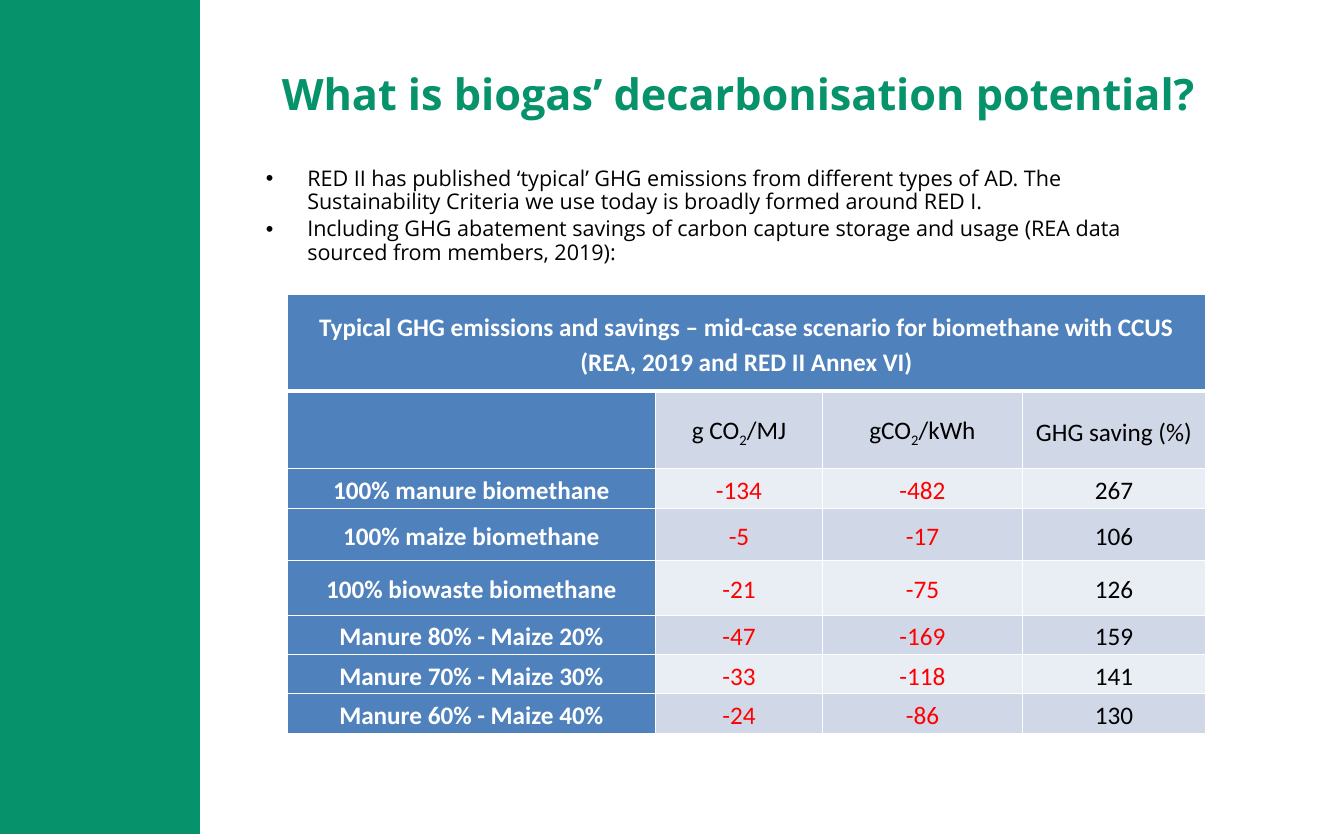
from lxml import etree
from pptx import Presentation
from pptx.dml.color import RGBColor
from pptx.enum.shapes import MSO_SHAPE
from pptx.enum.text import MSO_ANCHOR, MSO_AUTO_SIZE, PP_ALIGN
from pptx.oxml.ns import qn
from pptx.util import Inches, Pt

RECT = MSO_SHAPE.RECTANGLE
MIDDLE = MSO_ANCHOR.MIDDLE
TOP = MSO_ANCHOR.TOP
CENTER = PP_ALIGN.CENTER
FIXED = MSO_AUTO_SIZE.NONE

GREEN = RGBColor(0x06, 0x92, 0x6B)
BLUE = RGBColor(0x4F, 0x81, 0xBD)
DARK = RGBColor(0xD0, 0xD8, 0xE8)
PALE = RGBColor(0xE9, 0xED, 0xF4)
RED = RGBColor(0xFF, 0x00, 0x00)
BLACK = RGBColor(0x00, 0x00, 0x00)
WHITE = RGBColor(0xFF, 0xFF, 0xFF)

WIDE = Inches(13.33)
HIGH = Inches(8.27)

TITLE = "What is biogas’ decarbonisation potential?"
POINTS = [
    "RED II has published ‘typical’ GHG emissions from different types of AD. "
    "The Sustainability Criteria we use today is broadly formed around RED I.",
    "Including GHG abatement savings of carbon capture storage and usage "
    "(REA data sourced from members, 2019):",
]
BANNER = (
    "Typical GHG emissions and savings – mid-case scenario for biomethane with CCUS\n"
    "(REA, 2019 and RED II Annex VI)"
)
HEADS = [["g CO", "2", "/MJ"], ["gCO", "2", "/kWh"], ["GHG saving (%)"]]
DATA = [
    ("100% manure biomethane", -134, -482, 267),
    ("100% maize biomethane", -5, -17, 106),
    ("100% biowaste biomethane", -21, -75, 126),
    ("Manure 80% - Maize 20%", -47, -169, 159),
    ("Manure 70% - Maize 30%", -33, -118, 141),
    ("Manure 60% - Maize 40%", -24, -86, 130),
]
COLS = [27.38, 12.45, 14.85, 13.65]
ROWS = [11.61, 9.31, 4.72, 6.29, 6.53, 4.72, 4.72, 4.72]


def across(share):
    return int(WIDE * share / 100)


def down(share):
    return int(HIGH * share / 100)


def box(left, top, width, height):
    return across(left), down(top), across(width), down(height)


def style(run, face, size, color, bold=False):
    font = run.font
    font.name = face
    font.size = Pt(size)
    font.color.rgb = color
    font.bold = bold


def add_title(slide):
    title = slide.shapes.title
    title.left, title.top, title.width, title.height = box(20.03, 2.78, 69.77, 16.69)
    frame = title.text_frame
    frame.text = TITLE
    frame.word_wrap = True
    frame.auto_size = FIXED
    frame.vertical_anchor = MIDDLE
    line = frame.paragraphs[0]
    line.alignment = CENTER
    style(line.runs[0], "Open Sans", 30.9, GREEN, True)


def add_points(slide):
    frame = slide.shapes.add_textbox(*box(19.05, 19.59, 65.64, 14.75)).text_frame
    frame.text = "\n".join(POINTS)
    frame.word_wrap = True
    frame.vertical_anchor = TOP
    indent = Inches(0.41)
    for line in frame.paragraphs:
        line.line_spacing = 0.89
        line.space_before = Pt(3)
        style(line.runs[0], "Open Sans", 15.4, BLACK)
        props = line._p.get_or_add_pPr()
        props.set("marL", str(indent))
        props.set("indent", str(-indent))
        etree.SubElement(props, qn("a:buFont")).set("typeface", "Arial")
        etree.SubElement(props, qn("a:buChar")).set("char", "•")


def add_edge(cell, side, width):
    edge = etree.SubElement(cell._tc.get_or_add_tcPr(), qn("a:ln" + side))
    edge.set("w", str(Pt(width)))
    fill = etree.SubElement(edge, qn("a:solidFill"))
    etree.SubElement(fill, qn("a:srgbClr")).set("val", str(WHITE))


def paint(cell, fill, row):
    for side in "LRTB":
        thick = (row, side) in ((0, "B"), (1, "T"))
        add_edge(cell, side, 3 if thick else 1)
    cell.fill.solid()
    cell.fill.fore_color.rgb = fill
    cell.vertical_anchor = MIDDLE
    cell.margin_left = cell.margin_right = Inches(0.08)
    cell.margin_top = cell.margin_bottom = 0


def write(cell, parts, color, bold=False):
    frame = cell.text_frame
    frame.text = parts[0]
    for part in parts[1:]:
        frame.paragraphs[0].add_run().text = part
    for line in frame.paragraphs:
        line.alignment = CENTER
        line.line_spacing = 1.15
        for run in line.runs:
            style(run, "Calibri", 18, color, bold)
            if run.text == "2":
                run._r.get_or_add_rPr().set("baseline", "-25000")


def add_grid(slide):
    place = box(21.38, 35.31, sum(COLS), sum(ROWS))
    table = slide.shapes.add_table(len(ROWS), len(COLS), *place).table
    table.first_row = False
    table.horz_banding = False
    for col, share in zip(table.columns, COLS):
        col.width = across(share)
    for row, share in zip(table.rows, ROWS):
        row.height = down(share)
    for r in range(len(ROWS)):
        for c in range(len(COLS)):
            band = DARK if r % 2 else PALE
            paint(table.cell(r, c), BLUE if r == 0 or c == 0 else band, r)
    table.cell(0, 0).merge(table.cell(0, len(COLS) - 1))
    write(table.cell(0, 0), [BANNER], WHITE, True)
    for c, parts in enumerate(HEADS, 1):
        write(table.cell(1, c), parts, BLACK)
    for r, (name, *values) in enumerate(DATA, 2):
        write(table.cell(r, 0), [name], WHITE, True)
        for c, value in enumerate(values, 1):
            write(table.cell(r, c), [str(value)], RED if value < 0 else BLACK)


def add_side(slide):
    side = slide.shapes.add_shape(RECT, *box(0, 0, 14.78, 100))
    side.shadow.inherit = False
    side.fill.solid()
    side.fill.fore_color.rgb = GREEN
    side.line.color.rgb = GREEN
    side.line.width = Pt(2)


def main():
    deck = Presentation()
    deck.slide_width = WIDE
    deck.slide_height = HIGH
    slide = deck.slides.add_slide(deck.slide_layouts[5])
    add_title(slide)
    add_points(slide)
    add_grid(slide)
    add_side(slide)
    deck.save("out.pptx")


if __name__ == "__main__":
    main()
